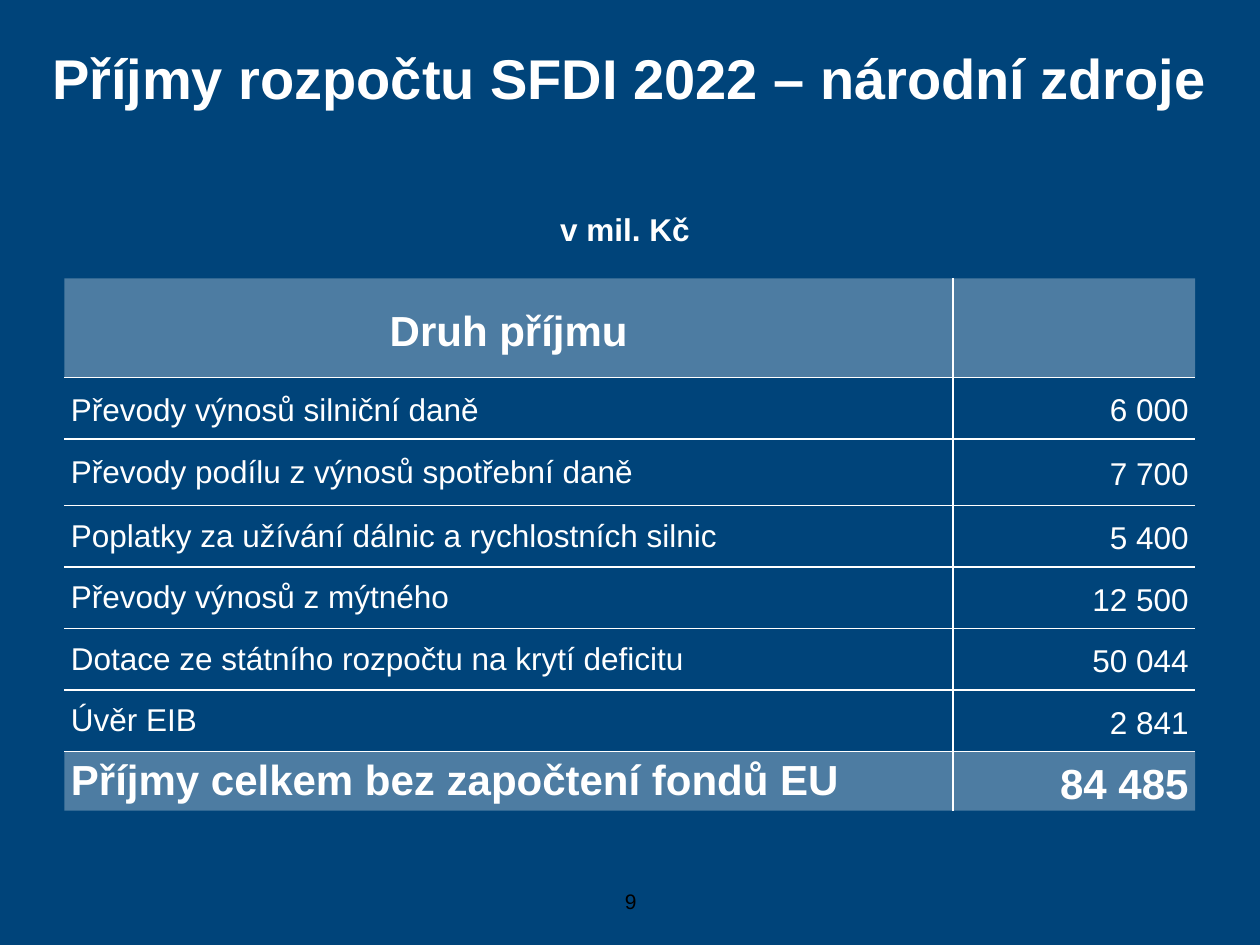
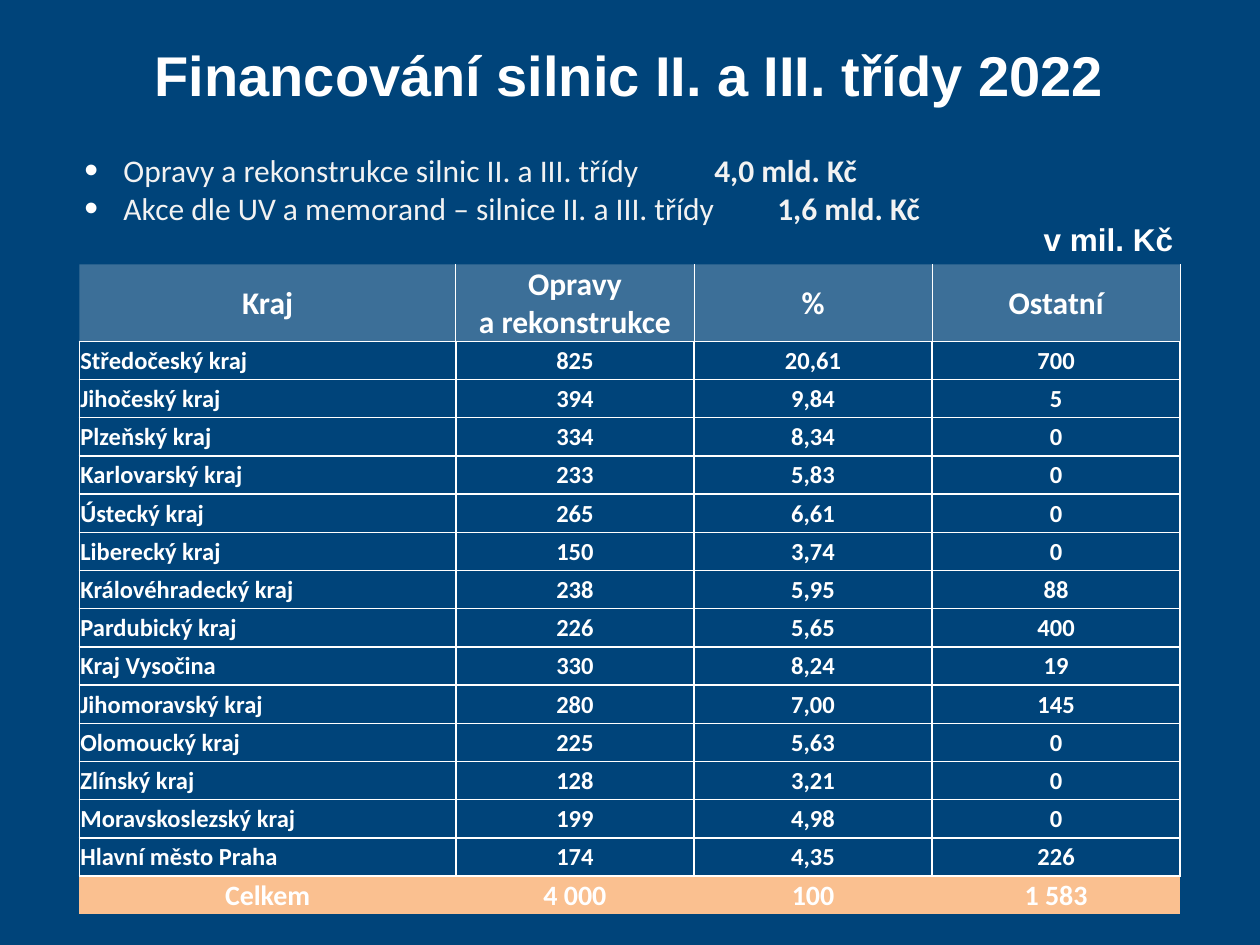
from lxml.etree import SubElement
from pptx import Presentation
from pptx.dml.color import RGBColor
from pptx.enum.text import MSO_ANCHOR, MSO_AUTO_SIZE, PP_ALIGN
from pptx.oxml.ns import qn
from pptx.util import Cm, Pt

NAVY, WHITE, PALE, PEACH, BLACK = "00447A", "FFFFFF", "F2F2F2", "FAC090", "000000"

TITLE_FONT = {"name": "Arial", "size": Pt(32), "bold": True}
UNIT_FONT = {"name": "Arial", "size": Pt(18), "bold": True}
NUMBER_FONT = {"name": "Arial", "size": Pt(12), "bold": False}
BULLET_FONT = {"name": "Calibri", "size": Pt(18), "bold": False}
INCOME_FONT = {"name": "Arial", "size": Pt(18), "bold": False}
INCOME_STRONG = {"name": "Arial", "size": Pt(24), "bold": True}
REGION_FONT = {"name": "Calibri", "size": Pt(14), "bold": True}
REGION_HEADER = {**REGION_FONT, "size": Pt(18)}
REGION_TOTAL = {**REGION_FONT, "size": Pt(16)}

INCOME_MARGINS = {"margin_left": Cm(0.13), "margin_right": Cm(0.13),
                  "margin_top": 0, "margin_bottom": 0}
REGION_MARGINS = {"margin_left": Cm(0.02), "margin_right": Cm(0.02),
                  "margin_top": Cm(0.02), "margin_bottom": 0}

INCOMES = [
    ("Druh příjmu", ""),
    ("Převody výnosů silniční daně", "6 000"),
    ("Převody podílu z výnosů spotřební daně", "7 700"),
    ("Poplatky za užívání dálnic a rychlostních silnic", "5 400"),
    ("Převody výnosů z mýtného", "12 500"),
    ("Dotace ze státního rozpočtu na krytí deficitu", "50 044"),
    ("Úvěr EIB", "2 841"),
    ("Příjmy celkem bez započtení fondů EU", "84 485"),
]

REGIONS = [
    ("Kraj", "Opravy\va rekonstrukce", "%", "Ostatní"),
    ("Středočeský kraj", "825", "20,61", "700"),
    ("Jihočeský kraj", "394", "9,84", "5"),
    ("Plzeňský kraj", "334", "8,34", "0"),
    ("Karlovarský kraj", "233", "5,83", "0"),
    ("Ústecký kraj", "265", "6,61", "0"),
    ("Liberecký kraj", "150", "3,74", "0"),
    ("Královéhradecký kraj", "238", "5,95", "88"),
    ("Pardubický kraj", "226", "5,65", "400"),
    ("Kraj Vysočina", "330", "8,24", "19"),
    ("Jihomoravský kraj", "280", "7,00", "145"),
    ("Olomoucký kraj", "225", "5,63", "0"),
    ("Zlínský kraj", "128", "3,21", "0"),
    ("Moravskoslezský kraj", "199", "4,98", "0"),
    ("Hlavní město Praha", "174", "4,35", "226"),
    ("Celkem", "4 000", "100", "1 583"),
]

FUNDING = [
    ("Opravy a rekonstrukce silnic II. a III. třídy\t\t", "4,0 mld. Kč"),
    ("Akce dle UV a memorand – silnice II. a III. třídy\t", "1,6 mld. Kč"),
]


def rgb(value):
    """Turn a hex string into a colour."""
    return RGBColor.from_string(value)


def apply(target, formats):
    """Set every format value on the target."""
    for name, value in formats.items():
        setattr(target, name, value)


def style_runs(paragraph, font, color):
    """Give all runs of a paragraph one font and colour."""
    for run in paragraph.runs:
        apply(run.font, font)
        run.font.color.rgb = rgb(color)


def write(frame, text, font, color, align):
    """Write one formatted paragraph into a text frame."""
    paragraph = frame.paragraphs[0]
    paragraph.text = text
    paragraph.alignment = align
    style_runs(paragraph, font, color)
    return paragraph


def place(shape, left, top, width, height):
    """Move and size a shape in centimetres."""
    apply(shape, {"left": Cm(left), "top": Cm(top),
                  "width": Cm(width), "height": Cm(height)})


def add_titled_slide(deck, text, top):
    """Add a title-only slide with its heading formatted."""
    slide = deck.slides.add_slide(deck.slide_layouts[5])
    heading = slide.shapes.title
    place(heading, 0, top, 25.4, 1.63)
    apply(heading.text_frame, {"word_wrap": True, "vertical_anchor": MSO_ANCHOR.TOP,
                               "auto_size": MSO_AUTO_SIZE.SHAPE_TO_FIT_TEXT})
    write(heading.text_frame, text, TITLE_FONT, WHITE, PP_ALIGN.CENTER)
    return slide


def add_label(slide, box, text, font, color, align, anchor=MSO_ANCHOR.TOP):
    """Add a one-line label."""
    frame = slide.shapes.add_textbox(*map(Cm, box)).text_frame
    apply(frame, {"word_wrap": True, "vertical_anchor": anchor})
    write(frame, text, font, color, align)


def add_bullet(paragraph):
    """Give a paragraph a white hanging bullet."""
    properties = paragraph._p.get_or_add_pPr()
    properties.set("marL", str(Cm(0.79)))
    properties.set("indent", str(-Cm(0.79)))
    color = SubElement(properties, qn("a:buClr"))
    SubElement(color, qn("a:srgbClr"), val=WHITE)
    SubElement(properties, qn("a:buSzPct"), val="125000")
    SubElement(properties, qn("a:buFont"), typeface="Arial")
    SubElement(properties, qn("a:buChar"), char="•")


def add_funding_list(slide, box, items):
    """List the funding lines with bold amounts."""
    frame = slide.shapes.add_textbox(*map(Cm, box)).text_frame
    frame.word_wrap = True
    for index, (purpose, amount) in enumerate(items):
        paragraph = frame.add_paragraph() if index else frame.paragraphs[0]
        add_bullet(paragraph)
        for text in (purpose, amount):
            paragraph.add_run().text = text
        style_runs(paragraph, BULLET_FONT, PALE)
        paragraph.runs[1].font.bold = True


def set_borders(cell, widths):
    """Draw white borders on the sides with a width and clear the others."""
    properties = cell._tc.get_or_add_tcPr()
    for side in "LRTB":
        width = widths.get(side, 0)
        line = SubElement(properties, qn(f"a:ln{side}"), w=str(Pt(width)))
        if width:
            fill = SubElement(line, qn("a:solidFill"))
            SubElement(fill, qn("a:srgbClr"), val=WHITE)
        else:
            SubElement(line, qn("a:noFill"))


def set_fill(cell, color=None, opacity=100):
    """Fill a cell, or leave it clear without a colour."""
    if color is None:
        cell.fill.background()
        return
    cell.fill.solid()
    cell.fill.fore_color.rgb = rgb(color)
    if opacity < 100:
        shade = cell._tc.tcPr.find(f"{qn('a:solidFill')}/{qn('a:srgbClr')}")
        SubElement(shade, qn("a:alpha"), val=str(opacity * 1000))


def add_grid(slide, corner, widths, heights, rows, margins, format_cell):
    """Add a table whose cells are formatted by a rule."""
    size = Cm(sum(widths)), Cm(sum(heights))
    table = slide.shapes.add_table(len(rows), len(widths), *map(Cm, corner), *size).table
    apply(table, {"first_row": False, "horz_banding": False})
    for column, width in zip(table.columns, widths):
        column.width = Cm(width)
    for r, (values, height) in enumerate(zip(rows, heights)):
        table.rows[r].height = Cm(height)
        for c, text in enumerate(values):
            cell = table.cell(r, c)
            apply(cell, {**margins, "vertical_anchor": MSO_ANCHOR.MIDDLE})
            format_cell(cell, text, r, c)


def format_income(cell, text, r, c):
    """Format a cell of the income table."""
    last = len(INCOMES) - 1
    strong = r in (0, last)
    set_borders(cell, {"L": c, "R": 1 - c, "T": int(r > 0), "B": int(r < last)})
    set_fill(cell, WHITE if strong else None, 30)
    align = PP_ALIGN.RIGHT if c else PP_ALIGN.LEFT if r else PP_ALIGN.CENTER
    font = INCOME_STRONG if strong else INCOME_FONT
    paragraph = write(cell.text_frame, text, font, WHITE, align)
    if c or r < 2:
        paragraph.line_spacing = 1.15


def format_region(cell, text, r, c):
    """Format a cell of the region table."""
    align = PP_ALIGN.CENTER
    if r == 0:
        font, fill = REGION_HEADER, (PALE, 25)
        borders = {"L": 0.5 if c else 0, "R": 0.5, "B": 1}
    elif r == len(REGIONS) - 1:
        font, fill, borders = REGION_TOTAL, (PEACH,), {"T": 1}
    else:
        font, fill, borders = REGION_FONT, (), dict.fromkeys("LRTB", 1)
        align = align if c else PP_ALIGN.LEFT
    set_borders(cell, borders)
    set_fill(cell, *fill)
    write(cell.text_frame, text, font, WHITE, align)


def add_income_slide(deck):
    """Build the slide with the national income."""
    slide = add_titled_slide(deck, "Příjmy rozpočtu SFDI 2022 – národní zdroje", 0.74)
    add_label(slide, (8.69, 17.65, 8.05, 1.02), "9", NUMBER_FONT, BLACK,
              PP_ALIGN.CENTER, MSO_ANCHOR.MIDDLE)
    heights = [2, 1.24, 1.34] + [1.24] * 4 + [1.19]
    add_grid(slide, (1.3, 5.61), [17.91, 4.88], heights, INCOMES,
             INCOME_MARGINS, format_income)
    add_label(slide, (6.3, 4.11, 12.6, 1.02), "v mil. Kč", UNIT_FONT, WHITE,
              PP_ALIGN.CENTER)


def add_region_slide(deck):
    """Build the slide with the road funding by region."""
    slide = add_titled_slide(deck, "Financování silnic II. a III. třídy 2022", 0.69)
    heights = [1.55] + [0.77] * (len(REGIONS) - 1)
    add_grid(slide, (1.6, 5.33), [7.59, 4.8, 4.8, 5], heights, REGIONS,
             REGION_MARGINS, format_region)
    add_label(slide, (11.3, 4.32, 12.6, 1.02), "v mil. Kč", UNIT_FONT, WHITE,
              PP_ALIGN.RIGHT)
    add_funding_list(slide, (1.45, 2.92, 19.2, 1.8), FUNDING)


def main():
    """Build and save the presentation."""
    deck = Presentation()
    apply(deck, {"slide_width": Cm(25.4), "slide_height": Cm(19.05)})
    backdrop = deck.slide_master.background.fill
    backdrop.solid()
    backdrop.fore_color.rgb = rgb(NAVY)
    add_income_slide(deck)
    add_region_slide(deck)
    deck.save("out.pptx")


if __name__ == "__main__":
    main()
